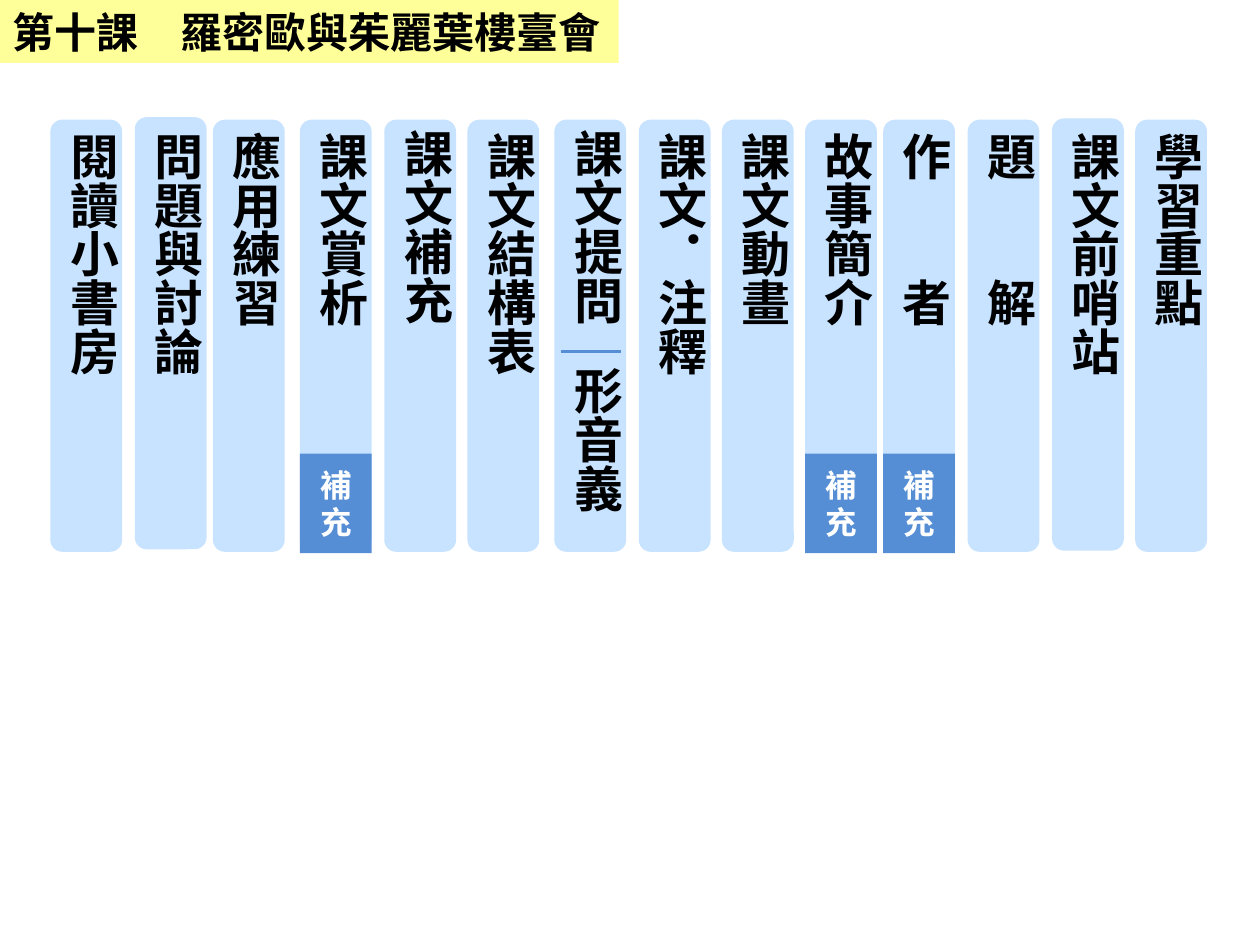
from lxml import etree
from pptx import Presentation, util as u
from pptx.dml.color import RGBColor
from pptx.enum import shapes, text
from pptx.oxml import ns

COLORS = {"banner": "FFFF99", "card": "99CCFF", "accent": "558ED5", "ink": "000000", "paper": "FFFFFF"}
SANS, SERIF = "Noto Sans CJK SC", "Times New Roman"
CELL = u.Inches(0.01)
CARD_W, CARD_H, CARD_TOP = 57, 343, 95
LABEL_W, TAG_H = 67, 79

COLUMNS = [
    {"label": "閱讀小書房", "x": 40},
    {"label": "問題與討論", "x": 107, "top": 93},
    {"label": "應用練習", "x": 169},
    {"label": "課文賞析", "x": 238, "tag": "補充"},
    {"label": "課文補充", "x": 305, "label_top": 93},
    {"label": "課文結構表", "x": 371},
    {"label": "課文提問", "x": 440, "label_top": 93, "sub": "形音義"},
    {"label": "課文．注釋", "x": 507},
    {"label": "課文動畫", "x": 573},
    {"label": "故事簡介", "x": 639, "tag": "補充"},
    {"label": "作\u3000\u3000者".replace("\u3000", "　"), "x": 701, "tag": "補充"},
    {"label": "題　　解", "x": 768},
    {"label": "課文前哨站", "x": 835, "top": 94},
    {"label": "學習重點", "x": 901},
]


def rgb(name):
    return RGBColor.from_string(COLORS[name])


def cells(*box):
    return [CELL * n for n in box]


def apply(target, values):
    for name, value in values.items():
        setattr(target, name, value)


def write(sp, words, size, font, color, align, frame):
    tf = sp.text_frame
    apply(tf, frame)
    p = tf.paragraphs[0]
    p.alignment = align
    r = p.add_run()
    r.text = words
    apply(r.font, {"size": u.Pt(size), "name": font, "bold": True})
    r.font.color.rgb = rgb(color)
    etree.SubElement(r.font._element, ns.qn("a:ea"), typeface=SANS)


def add_banner(s, box, words):
    sp = s.shapes.title
    apply(sp, dict(zip(("left", "top", "width", "height"), cells(*box))))
    sp.fill.solid()
    sp.fill.fore_color.rgb = rgb("banner")
    write(sp, words, 24, SANS, "ink", text.PP_ALIGN.LEFT, {
        "word_wrap": False, "auto_size": text.MSO_AUTO_SIZE.NONE,
        "vertical_anchor": text.MSO_ANCHOR.MIDDLE})


def add_block(s, kind, box, color, opacity=100):
    sp = s.shapes.add_shape(kind, *cells(*box))
    sp.shadow.inherit = False
    sp.fill.solid()
    sp.fill.fore_color.rgb = rgb(color)
    sp.line.fill.background()
    if opacity < 100:
        fill = sp._element.spPr.find(ns.qn("a:solidFill"))
        etree.SubElement(fill[0], ns.qn("a:alpha"), val=str(opacity * 1000))
    return sp


def add_label(s, box, words, align=text.PP_ALIGN.LEFT):
    sp = s.shapes.add_textbox(*cells(*box))
    write(sp, words, 28, SERIF, "ink", align, {
        "word_wrap": True, "auto_size": text.MSO_AUTO_SIZE.SHAPE_TO_FIT_TEXT})
    sp.text_frame._txBody.bodyPr.set("vert", "eaVert")


def add_tag(s, box, words):
    sp = add_block(s, shapes.MSO_SHAPE.RECTANGLE, box, "accent")
    write(sp, words, 18, SANS, "paper", text.PP_ALIGN.CENTER, {
        "word_wrap": True, "vertical_anchor": text.MSO_ANCHOR.MIDDLE})


def add_divider(s, x, y, length):
    line = s.shapes.add_connector(shapes.MSO_CONNECTOR.STRAIGHT, *cells(x, y, x + length, y))
    line.line.color.rgb = rgb("accent")
    line.line.width = u.Pt(1.5)
    etree.SubElement(line._element.spPr, ns.qn("a:effectLst"))


def add_column(s, box, column):
    x, y, w, h = box
    label_x = x + (w - LABEL_W) // 2
    label_top = column.get("label_top", CARD_TOP)
    label_h = 185 if "sub" in column else 264 if "tag" in column else h
    add_block(s, shapes.MSO_SHAPE.ROUNDED_RECTANGLE, box, "card", 54)
    add_label(s, (label_x, label_top, LABEL_W, label_h), column["label"])
    if "sub" in column:
        add_divider(s, x + 5, y + 184, 48)
        add_label(s, (label_x, y + 186, LABEL_W, 157), column["sub"], text.PP_ALIGN.CENTER)
    if "tag" in column:
        add_tag(s, (x, y + 265, w, TAG_H), column["tag"])


def main():
    prs = Presentation()
    apply(prs, {"slide_width": CELL * 1000, "slide_height": CELL * 750})
    s = prs.slides.add_slide(prs.slide_layouts[5])
    add_banner(s, (0, 0, 491, 50), "第十課　羅密歐與茱麗葉樓臺會")
    for column in COLUMNS:
        add_column(s, (column["x"], column.get("top", CARD_TOP), CARD_W, CARD_H), column)
    prs.save("out.pptx")


if __name__ == "__main__":
    main()
